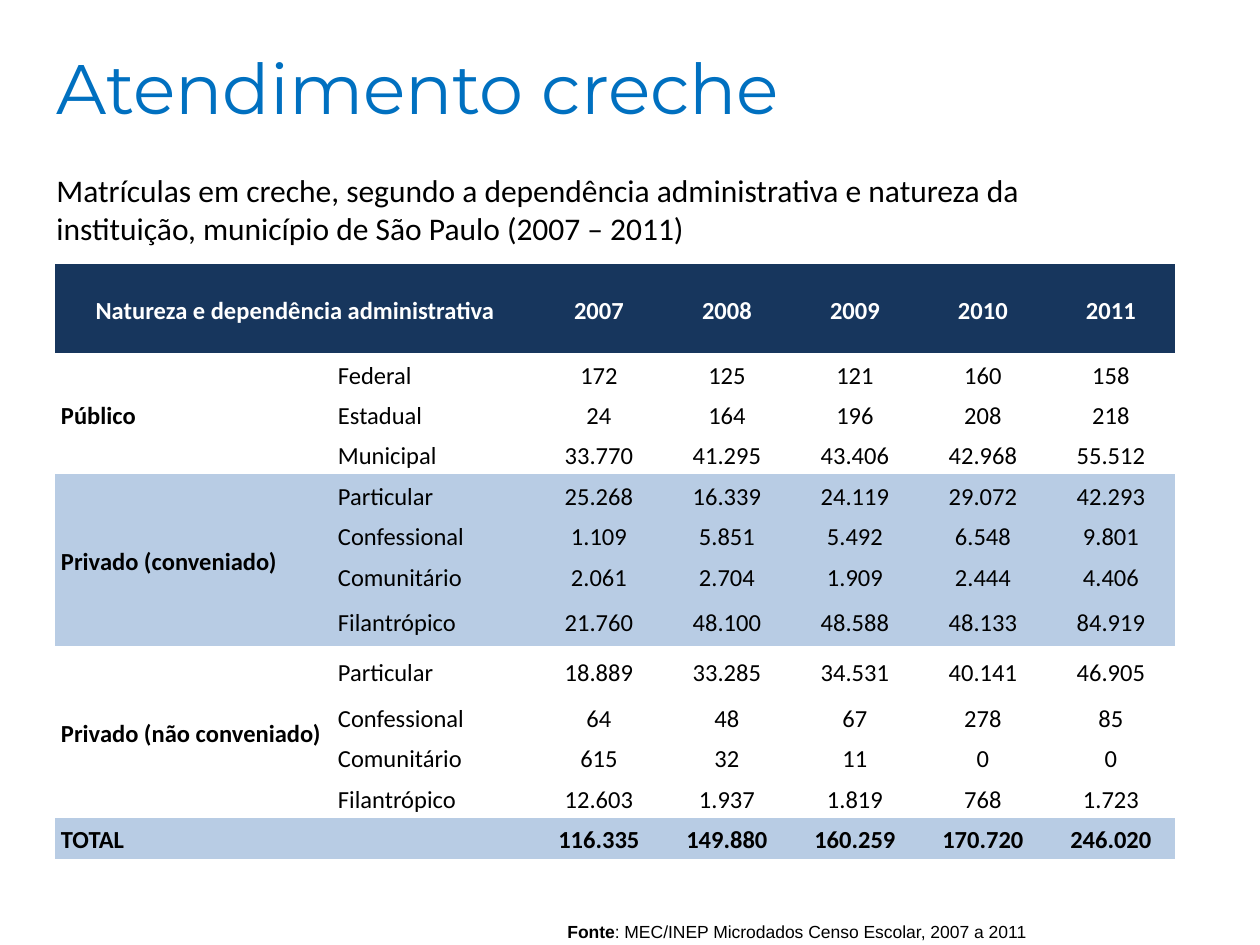
from pptx import Presentation
from pptx import util as u
from pptx.dml.color import RGBColor
from pptx.enum import text

PX = u.Inches(1) // 126
NO_STYLE = "{2D5ABB26-0587-4C30-8999-92F81FD0307C}"
NAVY, PALE, BLUE, BLACK, WHITE = "17365D", "B8CCE4", "0070C0", "000000", "FFFFFF"

YEARS = ["2007", "2008", "2009", "2010", "2011"]
GROUPS = [
    ("Público", None, [
        ("Federal", "172 125 121 160 158"),
        ("Estadual", "24 164 196 208 218"),
        ("Municipal", "33.770 41.295 43.406 42.968 55.512"),
    ]),
    ("Privado (conveniado)", PALE, [
        ("Particular", "25.268 16.339 24.119 29.072 42.293"),
        ("Confessional", "1.109 5.851 5.492 6.548 9.801"),
        ("Comunitário", "2.061 2.704 1.909 2.444 4.406"),
        ("Filantrópico", "21.760 48.100 48.588 48.133 84.919"),
    ]),
    ("Privado (não conveniado)", None, [
        ("Particular", "18.889 33.285 34.531 40.141 46.905"),
        ("Confessional", "64 48 67 278 85"),
        ("Comunitário", "615 32 11 0 0"),
        ("Filantrópico", "12.603 1.937 1.819 768 1.723"),
    ]),
    ("TOTAL", PALE, [("", "116.335 149.880 160.259 170.720 246.020")]),
]
COLUMN_WIDTHS = [277, 203] + [128] * len(YEARS)
ROW_HEIGHTS = [89, 41, 40, 40, 41, 40, 41, 50, 51, 40, 41, 40, 41]


def color(code):
    return RGBColor.from_string(code)


def write(para, words, size=14, font="Calibri", ink=BLACK, bold=False):
    span = para.add_run()
    span.text = words
    span.font.size = u.Pt(size)
    span.font.name = font
    span.font.bold = bold
    span.font.color.rgb = color(ink)


def add_text(page, box, spans, anchor=text.MSO_ANCHOR.TOP, **style):
    """Add a text box; spans are (words, bold) pairs of one paragraph."""
    frame = page.shapes.add_textbox(*(side * PX for side in box)).text_frame
    frame.word_wrap = True
    frame.vertical_anchor = anchor
    for words, bold in spans:
        write(frame.paragraphs[0], words, bold=bold, **style)


def fill_cell(cell, words, fill=None, centered=False, **style):
    cell.vertical_anchor = text.MSO_ANCHOR.MIDDLE
    cell.margin_left = cell.margin_right = 6 * PX
    cell.margin_top = cell.margin_bottom = 0
    if fill:
        cell.fill.solid()
        cell.fill.fore_color.rgb = color(fill)
    else:
        cell.fill.background()
    if words:
        para = cell.text_frame.paragraphs[0]
        para.line_spacing = 1.15
        if centered:
            para.alignment = text.PP_ALIGN.CENTER
        write(para, words, **style)


def add_enrolment_table(page, left, top):
    table = page.shapes.add_table(
        len(ROW_HEIGHTS), len(COLUMN_WIDTHS), left * PX, top * PX,
        sum(COLUMN_WIDTHS) * PX, sum(ROW_HEIGHTS) * PX).table
    table.first_row = table.horz_banding = False
    table._tbl.tblPr[0].text = NO_STYLE
    for column, width in zip(table.columns, COLUMN_WIDTHS):
        column.width = width * PX
    for row, height in zip(table.rows, ROW_HEIGHTS):
        row.height = height * PX

    headings = ["Natureza e dependência administrativa", ""] + YEARS
    for c, heading in enumerate(headings):
        fill_cell(table.cell(0, c), heading, NAVY, True, ink=WHITE, bold=True)
    table.cell(0, 0).merge(table.cell(0, 1))

    start = 1
    for group, fill, kinds in GROUPS:
        for r, (kind, figures) in enumerate(kinds, start):
            fill_cell(table.cell(r, 0), group if r == start else "", fill, bold=True)
            fill_cell(table.cell(r, 1), kind, fill)
            for c, figure in enumerate(figures.split(), 2):
                fill_cell(table.cell(r, c), figure, fill, True, bold=not kind)
        end = start + len(kinds)
        if len(kinds) > 1:
            table.cell(start, 0).merge(table.cell(end - 1, 0))
        start = end


def main():
    deck = Presentation()
    deck.slide_width, deck.slide_height = 1260 * PX, 945 * PX
    page = deck.slides.add_slide(deck.slide_layouts[6])
    middle = text.MSO_ANCHOR.MIDDLE
    add_text(page, (44, 38, 1134, 97), [("Atendimento creche", False)], middle,
             size=40, font="Montserrat", ink=BLUE)
    add_enrolment_table(page, 55, 264)
    add_text(page, (44, 165, 1131, 89), [(
        "Matrículas em creche, segundo a dependência administrativa e natureza "
        "da instituição, município de São Paulo (2007 – 2011)", False)], size=18)
    add_text(page, (555, 914, 501, 34), [
        ("Fonte", True),
        (": MEC/INEP Microdados Censo Escolar, 2007 a 2011", False)], middle,
        size=10, font="Arial")
    deck.save("out.pptx")


if __name__ == "__main__":
    main()
